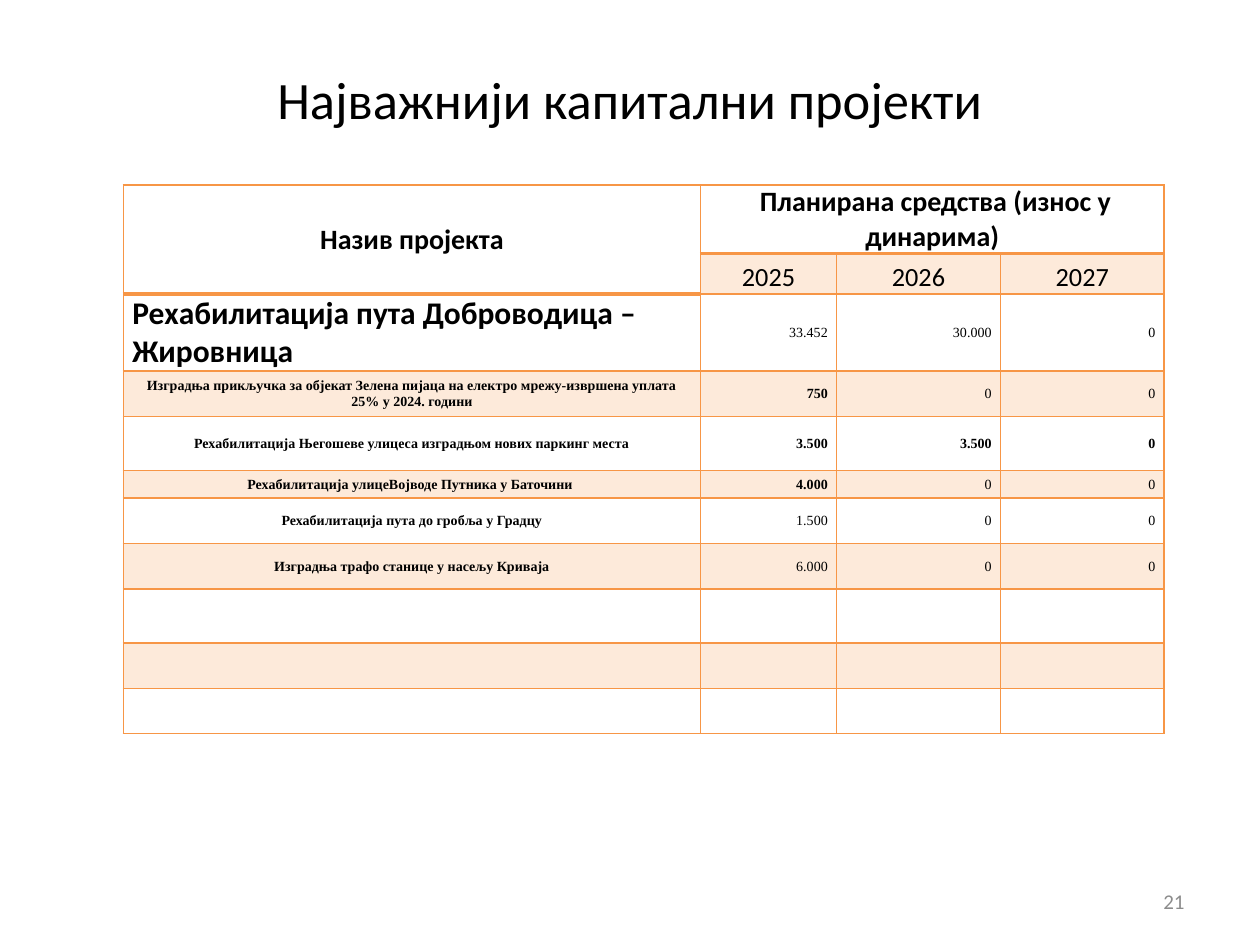
from lxml import etree
from pptx import Presentation
from pptx.dml.color import RGBColor
from pptx.enum import text
from pptx.oxml import ns
from pptx.util import Inches, Pt

# Content: each project has a name, its amounts and the count of bold amounts
TITLE = "Најважнији капитални пројекти"
PAGE = "21"
NAME_HEAD = "Назив пројекта"
FUND_HEAD = " Планирана средства (износ у динарима)"
YEARS = ["2025", "2026", "2027"]
PROJECTS = [
    ("Рехабилитација пута Доброводица – Жировница",
     ["33.452", "30.000", "0"], 0),
    ("Изградња прикључка за објекат Зелена пијаца на електро "
     "мрежу-извршена уплата 25% у 2024. години", ["750", "0", "0"], 1),
    ("Рехабилитација Његошеве улицеса изградњом нових паркинг места",
     ["3.500", "3.500", "0"], 3),
    ("Рехабилитација улицеВојводе Путника у Баточини ",
     ["4.000", "0", "0"], 1),
    ("Рехабилитација пута до гробља у Градцу", ["1.500", "0", "0"], 0),
    ("Изградња трафо станице у насељу Криваја", ["6.000", "0", "0"], 0),
]

# Layout in inches: left, top, width, height
TITLE_BOX = (0.5, 0.3, 9, 0.96)
PAGE_BOX = (7.17, 6.95, 2.33, 0.4)
TABLE_AT = (0.98, 1.47)
COLS = [4.58, 1.08, 1.3, 1.3]
ROWS = [0.31, 0.32, 0.36, 0.36, 0.43, 0.22, 0.36, 0.36, 0.43, 0.36, 0.36]
HEADS = 2  # head rows above the projects
PAD = 0.07

THEME = {
    "ink": "000000", "grey": "8C8C8C", "accent": "F79646", "tint": 20,
    "sans": "Calibri", "serif": "Times New Roman",
    "title": 30, "head": 16, "year": 15, "lead": 18, "body": 8, "page": 12,
    "line": 1, "base": 2,
}
ALIGN = text.PP_ALIGN
MID, LOW = text.MSO_ANCHOR.MIDDLE, text.MSO_ANCHOR.BOTTOM


def write(frame, words, size, font="sans", bold=False,
          align=ALIGN.CENTER, ink="ink"):
    """Put one styled run into the first paragraph."""
    para = frame.paragraphs[0]
    para.alignment = align
    run = para.add_run()
    run.text = words
    run.font.size = Pt(THEME[size])
    run.font.name = THEME[font]
    run.font.bold = bold
    run.font.color.rgb = RGBColor.from_string(THEME[ink])


def border(cell, base):
    """Draw four accent lines; base names the width of the lowest one."""
    props = cell._tc.get_or_add_tcPr()
    widths = {"L": "line", "R": "line", "T": "line", "B": base}
    for side, width in widths.items():
        line = etree.SubElement(props, ns.qn("a:ln" + side),
                                w=str(Pt(THEME[width])))
        fill = etree.SubElement(line, ns.qn("a:solidFill"))
        etree.SubElement(fill, ns.qn("a:srgbClr"), val=THEME["accent"])


def tint(cell):
    """Fill with the see-through accent colour."""
    cell.fill.solid()
    cell.fill.fore_color.rgb = RGBColor.from_string(THEME["accent"])
    fill = cell._tc.tcPr.find(ns.qn("a:solidFill"))
    color = fill.find(ns.qn("a:srgbClr"))
    etree.SubElement(color, ns.qn("a:alpha"), val=str(THEME["tint"] * 1000))


def frame_cells(grid):
    """Pad, line and fill each cell; odd rows are tinted."""
    for r in range(len(ROWS)):
        for c in range(len(COLS)):
            cell = grid.cell(r, c)
            in_head = r < HEADS
            merged = r == 0 or (in_head and c == 0)
            cell.margin_left = cell.margin_right = Inches(PAD)
            cell.margin_top = cell.margin_bottom = 0
            cell.vertical_anchor = LOW if in_head and c > 0 else MID
            border(cell, "base" if merged else "line")
            if r % 2 == 1 and not merged:
                tint(cell)
            else:
                cell.fill.background()


def write_heads(grid):
    name, fund = grid.cell(0, 0), grid.cell(0, 1)
    name.merge(grid.cell(HEADS - 1, 0))
    fund.merge(grid.cell(0, len(YEARS)))
    for cell, words in ((name, NAME_HEAD), (fund, FUND_HEAD)):
        write(cell.text_frame, words, "head", bold=True)
    for c, year in enumerate(YEARS, 1):
        write(grid.cell(1, c).text_frame, year, "year")


def write_projects(grid):
    """The first project name is large and left; the rest are small."""
    for r, (name, sums, bolds) in enumerate(PROJECTS, HEADS):
        frame = grid.cell(r, 0).text_frame
        if r == HEADS:
            write(frame, name, "lead", bold=True, align=ALIGN.LEFT)
        else:
            write(frame, name, "body", "serif", bold=True)
        for c, amount in enumerate(sums, 1):
            write(grid.cell(r, c).text_frame, amount, "body", "serif",
                  bold=c <= bolds, align=ALIGN.RIGHT)


def add_grid(slide):
    box = [Inches(n) for n in (*TABLE_AT, sum(COLS), sum(ROWS))]
    grid = slide.shapes.add_table(len(ROWS), len(COLS), *box).table
    grid.first_row = grid.horz_banding = False
    for col, width in zip(grid.columns, COLS):
        col.width = Inches(width)
    for row, height in zip(grid.rows, ROWS):
        row.height = Inches(height)
    return grid


def main():
    deck = Presentation()
    deck.slide_width, deck.slide_height = Inches(10), Inches(7.5)
    slide = deck.slides.add_slide(deck.slide_layouts[5])

    # Title
    title = slide.shapes.title
    title.left, title.top, title.width, title.height = map(Inches, TITLE_BOX)
    title.text_frame.vertical_anchor = MID
    write(title.text_frame, TITLE, "title")

    # Table
    grid = add_grid(slide)
    frame_cells(grid)
    write_heads(grid)
    write_projects(grid)

    # Page number
    page = slide.shapes.add_textbox(*map(Inches, PAGE_BOX)).text_frame
    page.word_wrap = True
    page.vertical_anchor = MID
    write(page, PAGE, "page", align=ALIGN.RIGHT, ink="grey")

    deck.save("out.pptx")


if __name__ == "__main__":
    main()
